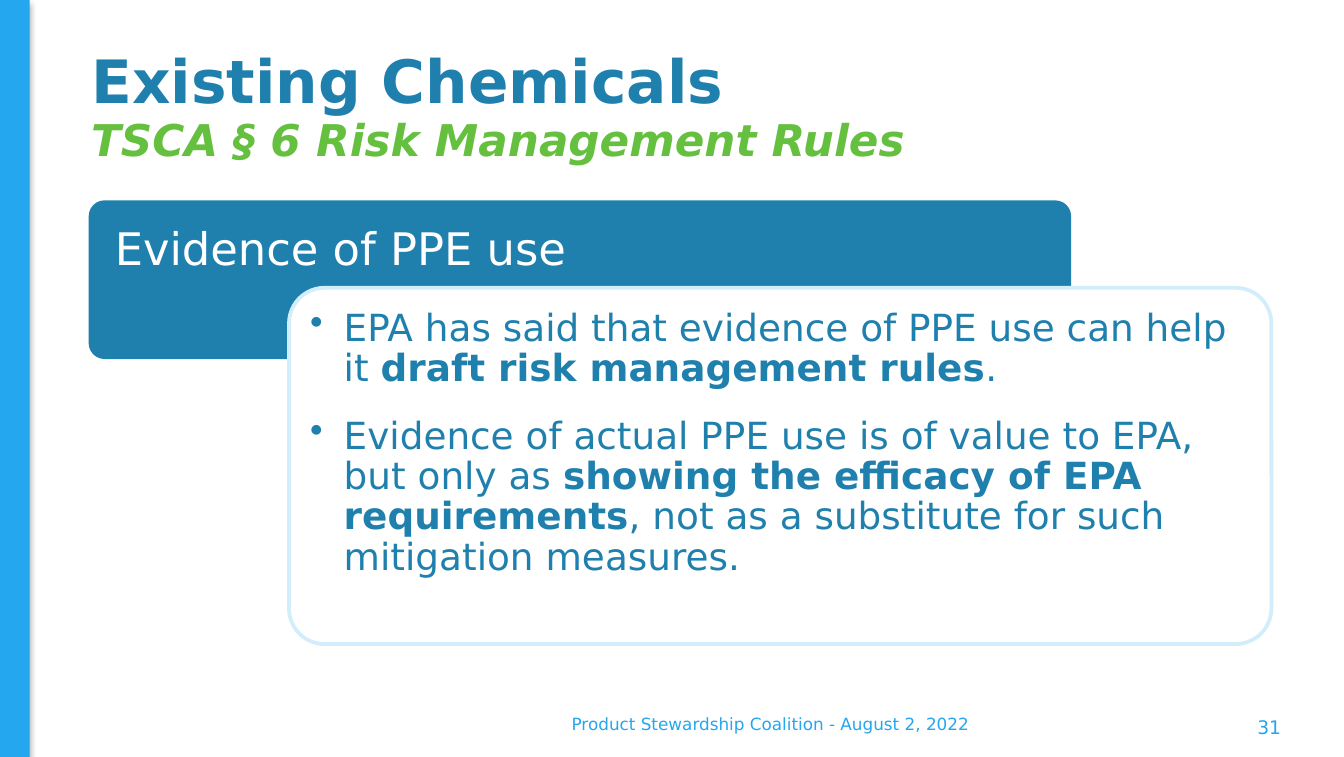
from dataclasses import dataclass

from lxml import etree
from pptx import Presentation
from pptx.dml.color import RGBColor
from pptx.enum.shapes import MSO_SHAPE
from pptx.enum.text import MSO_ANCHOR, MSO_AUTO_SIZE, PP_ALIGN
from pptx.oxml.ns import qn
from pptx.shapes.autoshape import Shape
from pptx.slide import Slide
from pptx.util import Inches, Pt

RECT, ROUNDED = MSO_SHAPE.RECTANGLE, MSO_SHAPE.ROUNDED_RECTANGLE
TOP, MIDDLE = MSO_ANCHOR.TOP, MSO_ANCHOR.MIDDLE
LEFT, CENTER, RIGHT = PP_ALIGN.LEFT, PP_ALIGN.CENTER, PP_ALIGN.RIGHT


@dataclass(frozen=True)
class Theme:
    font: str = "DejaVu Sans"
    sky: str = "24A7EF"
    pale: str = "D2EEFB"
    teal: str = "1F80AE"
    green: str = "66C03F"
    white: str = "FFFFFF"
    title: float = 32
    subtitle: float = 23.4
    heading: float = 24
    body: float = 20
    page: float = 10
    footer: float = 9
    tight: float = 0.9


@dataclass(frozen=True)
class Box:
    left: float
    top: float
    width: float
    height: float

    def lengths(self) -> tuple:
        return tuple(Inches(v) for v in (self.left, self.top, self.width, self.height))


@dataclass(frozen=True)
class Point:
    before: str
    stressed: str
    after: str


@dataclass(frozen=True)
class Label:
    text: str
    box: Box
    size: float
    color: str
    align: PP_ALIGN = LEFT
    bold: bool = False
    italic: bool = False
    spacing: float = 1.0


THEME = Theme()
BAR = Box(0, 0, 0.22, 5.63)
HEADING_CARD = Box(0.66, 1.49, 7.31, 1.18)
DETAIL_CARD = Box(2.15, 2.14, 7.31, 2.65)

TITLE = Label("Existing Chemicals", Box(0.58, 0.2, 8.96, 0.85), THEME.title,
              THEME.teal, bold=True, spacing=THEME.tight)
LABELS = (
    Label("Product Stewardship Coalition - August 2, 2022",
          Box(2.32, 5.23, 6.82, 0.3), THEME.footer, THEME.sky, CENTER),
    Label("31", Box(8.62, 5.31, 1.01, 0.2), THEME.page, THEME.sky, RIGHT),
    Label("TSCA § 6 Risk Management Rules", Box(0.58, 0.79, 8.96, 0.54),
          THEME.subtitle, THEME.green, bold=True, italic=True, spacing=THEME.tight),
)
POINTS = (
    Point("EPA has said that evidence of PPE use can help it ",
          "draft risk management rules", "."),
    Point("Evidence of actual PPE use is of value to EPA, but only as ",
          "showing the efficacy of EPA requirements",
          ", not as a substitute for such mitigation measures."),
)


def style_font(font, size: float, color: str) -> None:
    font.name = THEME.font
    font.size = Pt(size)
    font.color.rgb = RGBColor.from_string(color)


def prepare_frame(shape: Shape, anchor: MSO_ANCHOR):
    frame = shape.text_frame
    frame.word_wrap = True
    frame.auto_size = MSO_AUTO_SIZE.NONE
    frame.vertical_anchor = anchor
    return frame


def write_label(shape: Shape, label: Label) -> None:
    paragraph = prepare_frame(shape, MIDDLE).paragraphs[0]
    paragraph.text = label.text
    paragraph.alignment = label.align
    paragraph.line_spacing = label.spacing
    style_font(paragraph.font, label.size, label.color)
    paragraph.font.bold = label.bold
    paragraph.font.italic = label.italic


def add_panel(slide: Slide, kind: MSO_SHAPE, box: Box, fill: str) -> Shape:
    panel = slide.shapes.add_shape(kind, *box.lengths())
    panel.shadow.inherit = False
    panel.fill.solid()
    panel.fill.fore_color.rgb = RGBColor.from_string(fill)
    panel.line.fill.background()
    return panel


def add_card(slide: Slide, box: Box, fill: str, inset: float) -> Shape:
    card = add_panel(slide, ROUNDED, box, fill)
    card.adjustments[0] = 0.1
    frame = prepare_frame(card, TOP)
    frame.margin_left = frame.margin_right = frame.margin_top = Inches(inset)
    frame.margin_bottom = Inches(0.08)
    return card


def add_side_bar(slide: Slide) -> None:
    bar = add_panel(slide, RECT, BAR, THEME.sky)
    effects = bar._element.spPr.find(qn("a:effectLst"))
    shadow = etree.SubElement(effects, qn("a:outerShdw"), blurRad=str(Pt(3.1)),
                              dist=str(Pt(1.8)), dir="5400000", rotWithShape="0")
    black = etree.SubElement(shadow, qn("a:srgbClr"), val="000000")
    etree.SubElement(black, qn("a:alpha"), val="35000")


def add_heading_card(slide: Slide) -> None:
    card = add_card(slide, HEADING_CARD, THEME.teal, 0.16)
    heading = card.text_frame.paragraphs[0]
    heading.text = "Evidence of PPE use"
    heading.alignment = LEFT
    heading.line_spacing = THEME.tight
    style_font(heading.font, THEME.heading, THEME.white)


def add_detail_card(slide: Slide) -> None:
    card = add_card(slide, DETAIL_CARD, THEME.white, 0.08)
    card.line.color.rgb = RGBColor.from_string(THEME.pale)
    card.line.width = Pt(2)
    frame = card.text_frame
    for index, point in enumerate(POINTS):
        paragraph = frame.add_paragraph() if index else frame.paragraphs[0]
        paragraph.alignment = LEFT
        paragraph.line_spacing = THEME.tight
        paragraph.space_before = Pt(14.5 if index else 0)
        properties = paragraph._p.get_or_add_pPr()
        properties.set("marL", str(Inches(0.25)))
        properties.set("indent", str(Inches(-0.25)))
        etree.SubElement(properties, qn("a:buChar"), char="•")
        style_font(paragraph.font, THEME.body, THEME.teal)
        for text, bold in ((point.before, False), (point.stressed, True),
                           (point.after, False)):
            run = paragraph.add_run()
            run.text = text
            run.font.bold = bold


def main() -> None:
    deck = Presentation()
    deck.slide_width, deck.slide_height = Inches(10), Inches(5.63)
    slide = deck.slides.add_slide(deck.slide_layouts[5])

    add_side_bar(slide)
    title = slide.shapes.title
    title.left, title.top, title.width, title.height = TITLE.box.lengths()
    write_label(title, TITLE)
    add_heading_card(slide)
    add_detail_card(slide)
    for label in LABELS:
        write_label(slide.shapes.add_textbox(*label.box.lengths()), label)

    deck.save("out.pptx")


if __name__ == "__main__":
    main()
